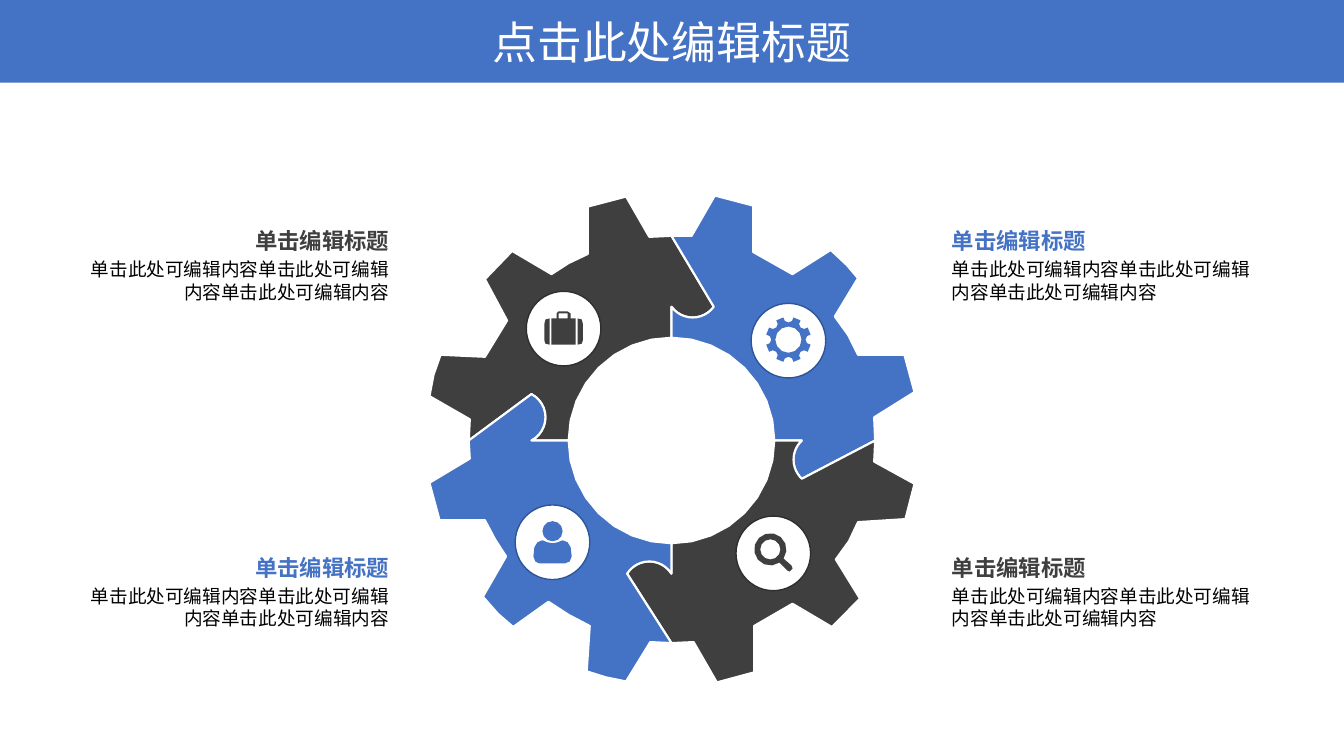
import math

import pptx
import pptx.dml.color
import pptx.enum.shapes
import pptx.enum.text
import pptx.oxml
import pptx.oxml.ns
import pptx.util

Inches, Pt = pptx.util.Inches, pptx.util.Pt
RGBColor = pptx.dml.color.RGBColor
SHAPE = pptx.enum.shapes.MSO_SHAPE
ALIGN = pptx.enum.text.PP_ALIGN

BLUE = RGBColor(0x44, 0x72, 0xC4)
DARK = RGBColor(0x3F, 0x3F, 0x3F)
BLUE_RIM = RGBColor(0x2F, 0x55, 0x97)
DARK_RIM = RGBColor(0x2F, 0x2F, 0x2F)
WHITE = RGBColor(0xFF, 0xFF, 0xFF)
BLACK = RGBColor(0, 0, 0)
FONT = "Noto Sans CJK SC"

deck = pptx.Presentation()
deck.slide_width, deck.slide_height = Inches(13.33), Inches(7.5)
page = deck.slides.add_slide(deck.slide_layouts[5])


def arc(center, radius, start, end, steps=12):
    """Points along an arc; degrees run clockwise from the right."""
    angles = [math.radians(start + (end - start) * n / steps) for n in range(steps + 1)]
    return [(center[0] + radius * math.cos(a), center[1] + radius * math.sin(a)) for a in angles]


def add_outline(contours, color, edge=None):
    """Draw closed contours as one shape; later contours cut holes."""
    contours = [[(Inches(x), Inches(y)) for x, y in contour] for contour in contours]
    builder = page.shapes.build_freeform(*contours[0][0])
    for contour in contours:
        if contour is not contours[0]:
            builder.move_to(*contour[0])
        builder.add_line_segments(contour[1:], close=True)
    shape = builder.convert_to_shape()
    shape.shadow.inherit = False
    shape.fill.solid()
    shape.fill.fore_color.rgb = color
    if edge is None:
        shape.line.fill.background()
    else:
        shape.line.color.rgb = edge
        shape.line.width = Pt(1.5)


# Title on its banner
banner = page.shapes.add_shape(SHAPE.RECTANGLE, 0, 0, deck.slide_width, Inches(0.82))
banner.shadow.inherit = False
banner.fill.solid()
banner.fill.fore_color.rgb = BLUE
banner.line.fill.background()
title = page.shapes.title
title.element.addprevious(banner.element)
title.left, title.top, title.width, title.height = map(Inches, (4.66, 0.09, 4.01, 0.64))
title.text_frame.text = "点击此处编辑标题"
title.text_frame.vertical_anchor = pptx.enum.text.MSO_ANCHOR.MIDDLE
title.text_frame.paragraphs[0].alignment = ALIGN.CENTER
title_font = title.text_frame.paragraphs[0].runs[0].font
title_font.size, title_font.color.rgb = Pt(32), WHITE

# Gear: four interlocking quarters, clockwise from the left seam
HUB, HUB_RADIUS, KNOB_RADIUS = (6.66, 4.37), 1.02, 0.26
KNOBS = [(5.15, 4.14), (6.87, 2.89), (8.13, 4.56), (6.44, 5.83)]
TEETH = [
    [(4.65, 4.37), (4.66, 4.16), (4.26, 3.93), (4.3, 3.72), (4.37, 3.52), (4.81, 3.54),
     (5.03, 3.18), (4.81, 2.77), (5.08, 2.49), (5.47, 2.72), (5.64, 2.61), (5.83, 2.52),
     (5.83, 2.05), (6.21, 1.95), (6.44, 2.35), (6.66, 2.34)],
    [(6.66, 2.34), (6.86, 2.34), (7.09, 1.94), (7.47, 2.04), (7.47, 2.5), (7.86, 2.72),
     (8.24, 2.48), (8.4, 2.63), (8.51, 2.76), (8.28, 3.14), (8.41, 3.32), (8.51, 3.52),
     (8.97, 3.52), (9.07, 3.89), (8.67, 4.14), (8.68, 4.37)],
    [(8.68, 4.37), (8.67, 4.58), (9.07, 4.8), (8.98, 5.15), (8.51, 5.18), (8.42, 5.37),
     (8.29, 5.55), (8.53, 5.94), (8.25, 6.22), (7.86, 5.99), (7.48, 6.21), (7.48, 6.67),
     (7.11, 6.77), (6.88, 6.37), (6.66, 6.38)],
    [(6.66, 6.38), (6.45, 6.37), (6.21, 6.76), (6.01, 6.72), (5.82, 6.66), (5.85, 6.21),
     (5.64, 6.1), (5.44, 5.97), (5.09, 6.22), (4.94, 6.09), (4.79, 5.92), (5.02, 5.52),
     (4.91, 5.35), (4.81, 5.16), (4.36, 5.16), (4.26, 4.79), (4.66, 4.55), (4.65, 4.37)],
]
seams = []
for number, knob in enumerate(KNOBS):
    angle = 180 + 90 * number
    turn = math.radians(angle)
    offset = (knob[1] - HUB[1]) * math.cos(turn) - (knob[0] - HUB[0]) * math.sin(turn)
    neck = math.degrees(math.acos(offset / KNOB_RADIUS))
    seams.append(arc(knob, KNOB_RADIUS, angle - 90 - neck, angle - 270 + neck))
for number, teeth in enumerate(TEETH):
    angle = 180 + 90 * number
    own_knob = seams[(number + 1) % 4][::-1]
    hub_arc = arc(HUB, HUB_RADIUS, angle + 90, angle, 8)
    add_outline([seams[number] + teeth + own_knob + hub_arc], (DARK, BLUE)[number % 2], WHITE)

# White discs under the icons
for left, top, rim in [(5.11, 5.01, BLUE_RIM), (7.3, 5.12, DARK_RIM),
                       (7.45, 3.01, BLUE_RIM), (5.22, 2.89, DARK_RIM)]:
    disc = page.shapes.add_shape(SHAPE.OVAL, Inches(left), Inches(top), Inches(0.74), Inches(0.74))
    disc.shadow.inherit = False
    disc.fill.solid()
    disc.fill.fore_color.rgb = WHITE
    disc.line.color.rgb = rim
    disc.line.width = Pt(1)

# Person
shoulders = [(5.6, 5.59), (5.35, 5.59), (5.31, 5.57), (5.29, 5.52), (5.3, 5.43),
             (5.33, 5.38), (5.38, 5.36), (5.43, 5.38), (5.48, 5.39), (5.53, 5.38),
             (5.58, 5.36), (5.63, 5.38), (5.66, 5.43), (5.67, 5.52), (5.65, 5.57)]
add_outline([shoulders, arc((5.48, 5.27), 0.1, 0, 360)], BLUE)

# Magnifier
lens = (7.64, 5.45)
handle = [(7.85, 5.61), (7.86, 5.64), (7.83, 5.67), (7.81, 5.66)]
add_outline([arc(lens, 0.16, 55, 395) + handle, arc(lens, 0.1, 0, 360)], DARK)

# Cog: eight round notches and a hole
cog, cog_rim = (7.82, 3.37), []
for number, notch in enumerate(arc(cog, 0.22, 0, 315, 7)):
    cog_rim += arc(notch, 0.05, 45 * number - 90, 45 * number - 270, 4)
add_outline([cog_rim, arc(cog, 0.13, 0, 360)], BLUE)

# Suitcase: mirrored ends around the middle
end_cap = [(5.45, 3.16), (5.45, 3.42), (5.41, 3.41), (5.4, 3.38), (5.4, 3.21), (5.41, 3.17)]
add_outline([end_cap], DARK)
add_outline([[(5.47, 3.16), (5.52, 3.16), (5.52, 3.11), (5.54, 3.09), (5.63, 3.09), (5.66, 3.11),
              (5.66, 3.16), (5.71, 3.16), (5.71, 3.42), (5.47, 3.42)],
             [(5.54, 3.16), (5.54, 3.11), (5.63, 3.11), (5.63, 3.16)]], DARK)
add_outline([[(2 * 5.59 - x, y) for x, y in end_cap]], DARK)

# Captions in two columns and two rows
for row, top in enumerate((2.25, 5.49)):
    for column, (left, side) in enumerate([(0.79, ALIGN.RIGHT), (9.44, ALIGN.LEFT)]):
        box = page.shapes.add_textbox(Inches(left), Inches(top), Inches(3.07), Inches(0.76))
        frame = box.text_frame
        frame.word_wrap = True
        frame.margin_left = frame.margin_right = frame.margin_top = frame.margin_bottom = 0
        frame.text = "单击编辑标题\n单击此处可编辑内容单击此处可编辑内容单击此处可编辑内容"
        heading_color = (DARK, BLUE)[(row + column) % 2]
        styles = [(16, 19.5, 0, True, heading_color), (13.3, 16, 3, False, BLACK)]
        for para, (size, pitch, gap, bold, color) in zip(frame.paragraphs, styles):
            para.alignment = side
            para.line_spacing, para.space_before = Pt(pitch), Pt(gap)
            font = para.runs[0].font
            font.size, font.bold, font.color.rgb = Pt(size), bold, color

# One font for Latin and East Asian text
for shape in page.shapes:
    if shape.has_text_frame:
        for para in shape.text_frame.paragraphs:
            for span in para.runs:
                span.font.name = FONT
                east_asian = pptx.oxml.parse_xml(
                    f'<a:ea {pptx.oxml.ns.nsdecls("a")} typeface="{FONT}"/>')
                span.font._element.find(pptx.oxml.ns.qn("a:latin")).addnext(east_asian)

deck.save("out.pptx")
